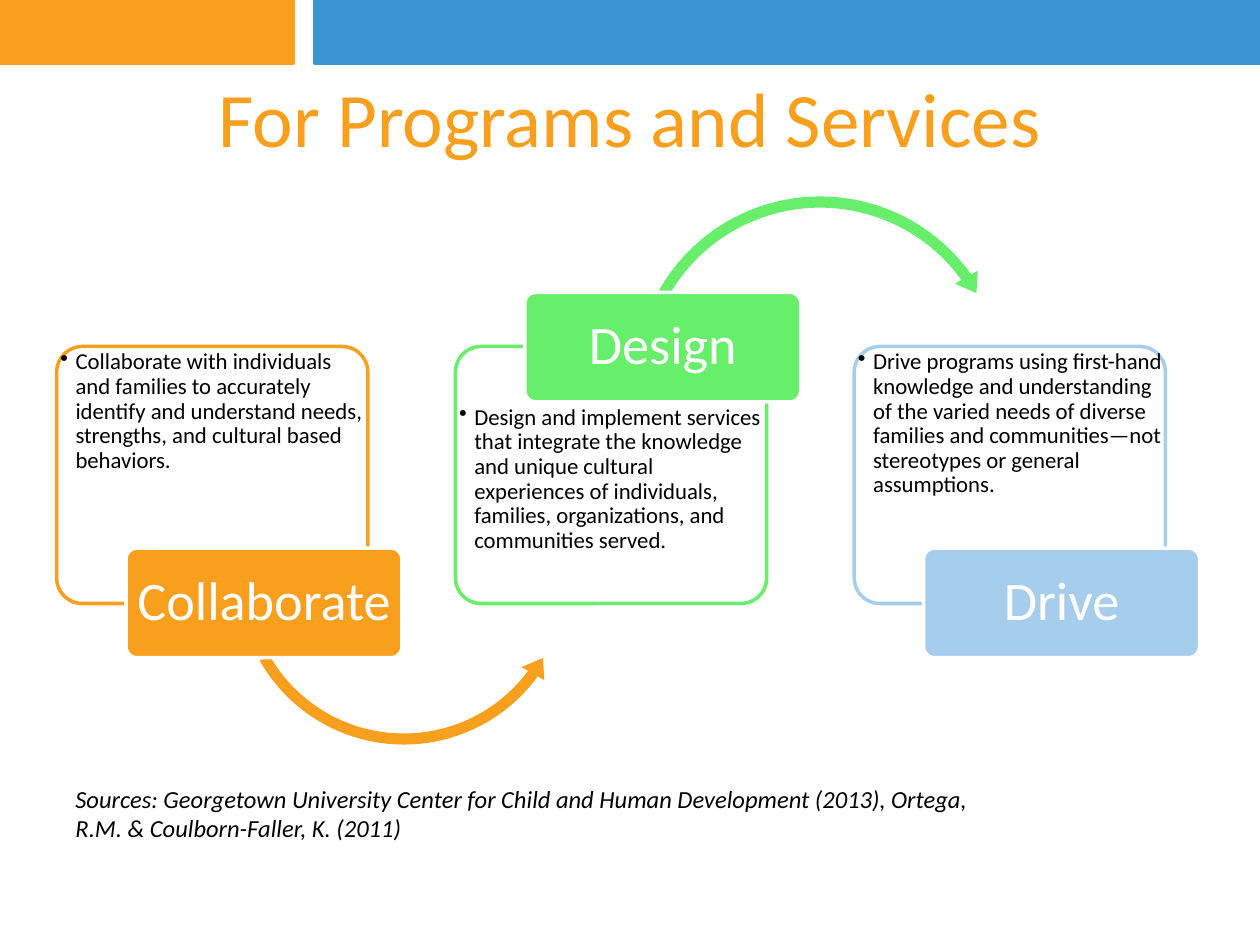
from dataclasses import dataclass
from typing import Optional

from lxml.etree import SubElement
from pptx import Presentation
from pptx.dml.color import RGBColor
from pptx.enum.shapes import MSO_SHAPE
from pptx.enum.text import MSO_ANCHOR, PP_ALIGN
from pptx.oxml.ns import qn
from pptx.util import Inches, Pt

COLORS = {
    "orange": "F89F1E",
    "blue": "3A96D0",
    "green": "67EE6A",
    "sky": "A7CDED",
    "white": "FFFFFF",
    "black": "000000",
}
FONT = "Calibri"
SLIDE_WIDTH, SLIDE_HEIGHT = Inches(10), Inches(7.5)
COLUMN, ROW = SLIDE_WIDTH // 1000, SLIDE_HEIGHT // 750

FIRST_PANEL, STEP_PITCH = 45, 316.5
PANEL_TOP, PANEL_WIDTH, PANEL_HEIGHT = 275, 247, 204
DETAIL_HEIGHT = 160
LABEL_SHIFT, LABEL_WIDTH, LABEL_HEIGHT = 55, 219, 87
LABEL_HIGH, LABEL_LOW = 232, 435


@dataclass(frozen=True)
class Area:
    left: float
    top: float
    width: float
    height: float

    def lengths(self) -> tuple[int, int, int, int]:
        return (round(self.left * COLUMN), round(self.top * ROW),
                round(self.width * COLUMN), round(self.height * ROW))


@dataclass(frozen=True)
class Arrow:
    kind: MSO_SHAPE
    area: Area
    adjustments: tuple[float, ...]


@dataclass(frozen=True)
class Step:
    label: str
    detail: str
    color: str
    label_on_top: bool = False
    arrow: Optional[Arrow] = None


BANDS = (
    (Area(0, 0, 233, 50), "orange"),
    (Area(250, 0, 750, 50), "blue"),
)

STEPS = (
    Step(
        "Collaborate",
        "Collaborate with individuals and families to accurately identify and "
        "understand needs, strengths, and cultural based behaviors.",
        "orange",
        arrow=Arrow(MSO_SHAPE.LEFT_CIRCULAR_ARROW, Area(183, 322, 275, 275),
                    (0.032, 4.002, 21.758, 90.245, 0.038)),
    ),
    Step(
        "Design",
        "Design and implement services that integrate the knowledge and unique "
        "cultural experiences of individuals, families, organizations, and "
        "communities served.",
        "green",
        label_on_top=True,
        arrow=Arrow(MSO_SHAPE.CIRCULAR_ARROW, Area(498, 150, 306, 306),
                    (0.029, 3.562, 194.683, 125.755, 0.034)),
    ),
    Step(
        "Drive",
        "Drive programs using first-hand knowledge and understanding of the "
        "varied needs of diverse families and communities—not stereotypes or "
        "general assumptions.",
        "sky",
    ),
)


def color_of(name: str) -> RGBColor:
    return RGBColor.from_string(COLORS[name])


def add_shape(page, kind: MSO_SHAPE, area: Area, fill: str,
              line: Optional[str] = None, adjustments: tuple[float, ...] = ()):
    shape = page.shapes.add_shape(kind, *area.lengths())
    shape.shadow.inherit = False
    shape.fill.solid()
    shape.fill.fore_color.rgb = color_of(fill)
    if line:
        shape.line.color.rgb = color_of(line)
        shape.line.width = Pt(2)
    else:
        shape.line.fill.background()
    for index, value in enumerate(adjustments):
        shape.adjustments[index] = value
    return shape


def write_text(box, text: str, size: int, color: str, centered: bool = False,
               italic: bool = False, bulleted: bool = False,
               line_spacing: Optional[float] = None,
               margins: Optional[tuple[float, float]] = None) -> None:
    frame = box.text_frame
    frame.word_wrap = True
    frame.vertical_anchor = MSO_ANCHOR.MIDDLE if centered else MSO_ANCHOR.TOP
    if margins:
        frame.margin_left = frame.margin_right = Inches(margins[0])
        frame.margin_top = frame.margin_bottom = Inches(margins[1])
    paragraph = frame.paragraphs[0]
    paragraph.text = text
    paragraph.alignment = PP_ALIGN.CENTER if centered else PP_ALIGN.LEFT
    paragraph.line_spacing = line_spacing
    if bulleted:
        properties = paragraph._p.get_or_add_pPr()
        properties.set("marL", str(Inches(0.12)))
        properties.set("indent", str(-Inches(0.12)))
        SubElement(properties, qn("a:buChar"), char="•")
    font = paragraph.font
    font.name = FONT
    font.size = Pt(size)
    font.italic = italic
    font.color.rgb = color_of(color)


def add_text(page, area: Area, text: str, size: int, color: str, **style) -> None:
    write_text(page.shapes.add_textbox(*area.lengths()), text, size, color, **style)


def add_step(page, index: int, step: Step) -> None:
    left = FIRST_PANEL + index * STEP_PITCH
    panel = add_shape(page, MSO_SHAPE.ROUNDED_RECTANGLE,
                      Area(left, PANEL_TOP, PANEL_WIDTH, PANEL_HEIGHT),
                      "white", step.color, (0.1,))
    panel_color = panel._element.spPr.find(qn("a:solidFill")).find(qn("a:srgbClr"))
    SubElement(panel_color, qn("a:alpha"), val="90000")

    detail_top = PANEL_TOP
    if step.label_on_top:
        detail_top += PANEL_HEIGHT - DETAIL_HEIGHT
    add_text(page, Area(left, detail_top, PANEL_WIDTH, DETAIL_HEIGHT),
             step.detail, 13, "black", bulleted=True, line_spacing=0.9,
             margins=(0.03, 0.03))

    if step.arrow:
        add_shape(page, step.arrow.kind, step.arrow.area, step.color,
                  adjustments=step.arrow.adjustments)

    label_top = LABEL_HIGH if step.label_on_top else LABEL_LOW
    label = add_shape(page, MSO_SHAPE.ROUNDED_RECTANGLE,
                      Area(left + LABEL_SHIFT, label_top, LABEL_WIDTH, LABEL_HEIGHT),
                      step.color, "white", (0.1,))
    write_text(label, step.label, 31, "white", centered=True, line_spacing=0.9,
               margins=(0.03, 0.02))


def main() -> None:
    deck = Presentation()
    deck.slide_width, deck.slide_height = SLIDE_WIDTH, SLIDE_HEIGHT
    page = deck.slides.add_slide(deck.slide_layouts[6])
    for area, color in BANDS:
        add_shape(page, MSO_SHAPE.RECTANGLE, area, color, color)
    add_text(page, Area(50, 30, 900, 125), "For Programs and Services",
             44, "orange", centered=True)
    add_text(page, Area(50, 617, 767, 81),
             "Sources: Georgetown University Center for Child and Human Development "
             "(2013), Ortega, R.M. & Coulborn-Faller, K. (2011)",
             14, "black", italic=True)
    for index, step in enumerate(STEPS):
        add_step(page, index, step)
    deck.save("out.pptx")


if __name__ == "__main__":
    main()
